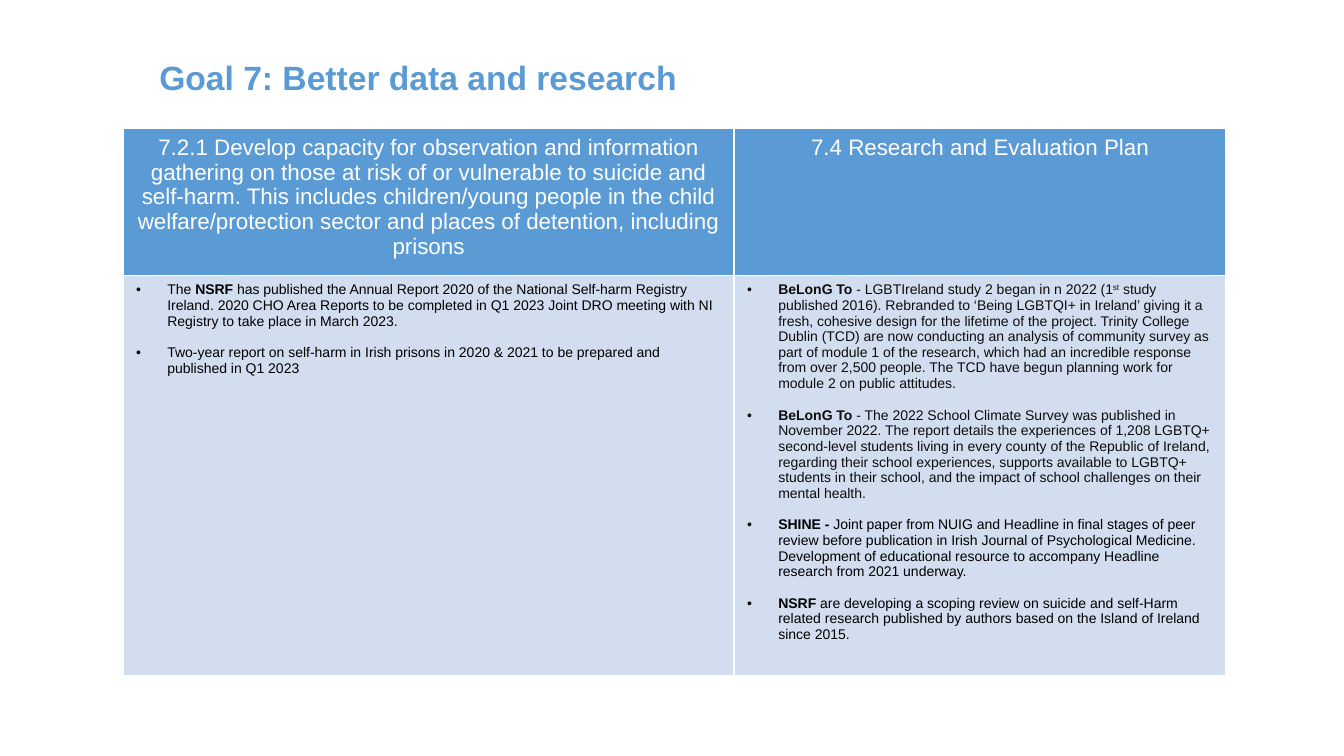
from dataclasses import dataclass

from lxml import etree
from pptx import Presentation
from pptx.dml.color import RGBColor
from pptx.enum.text import MSO_ANCHOR, PP_ALIGN
from pptx.oxml.ns import qn
from pptx.util import Inches, Pt

LEFT, CENTER = PP_ALIGN.LEFT, PP_ALIGN.CENTER
TOP = MSO_ANCHOR.TOP


@dataclass(frozen=True)
class Theme:
    font: str = "Arial"
    blue: str = "5B9BD5"
    pale: str = "D2DEEF"
    white: str = "FFFFFF"
    black: str = "000000"
    dark: str = "0D0D0D"
    title: int = 24
    header: int = 16
    body: int = 10


THEME = Theme()
PLAIN, BOLD, SUPER = "plain", "bold", "super"

HEADERS = [
    "7.2.1 Develop capacity for observation and information gathering on those at risk of "
    "or vulnerable to suicide and self-harm. This includes children/young people in the "
    "child welfare/protection sector and places of detention, including prisons",
    "7.4 Research and Evaluation Plan",
]
# Each column is a list of bullets: text colour, then runs of text and style
COLUMNS = [
    [
        (THEME.black, [
            ("The ", PLAIN),
            ("NSRF", BOLD),
            (" has published the Annual Report 2020 of the National Self-harm Registry "
             "Ireland. 2020 CHO Area Reports to be completed in Q1 2023 Joint DRO meeting "
             "with NI Registry to take place in March 2023.", PLAIN)]),
        (THEME.black, [
            ("Two-year report on self-harm in Irish prisons in 2020 & 2021 to be prepared "
             "and published in Q1 2023", PLAIN)]),
    ],
    [
        (THEME.dark, [
            ("BeLonG To ", BOLD),
            ("- LGBTIreland study 2 began in n 2022 (1", PLAIN),
            ("st", SUPER),
            (" study published 2016). Rebranded to ‘Being LGBTQI+ in Ireland’ giving it a "
             "fresh, cohesive design for the lifetime of the project. Trinity College Dublin "
             "(TCD) are now conducting an analysis of community survey as part of module 1 "
             "of the research, which had an incredible response from over 2,500 people. The "
             "TCD have begun planning work for module 2 on public attitudes.", PLAIN)]),
        (THEME.dark, [
            ("BeLonG To ", BOLD),
            ("- The 2022 School Climate Survey was published in November 2022. The report "
             "details the experiences of 1,208 LGBTQ+ second-level students living in every "
             "county of the Republic of Ireland, regarding their school experiences, "
             "supports available to LGBTQ+ students in their school, and the impact of "
             "school challenges on their mental health.", PLAIN)]),
        (THEME.black, [
            ("SHINE - ", BOLD),
            ("Joint paper from NUIG and Headline in final stages of peer review before "
             "publication in Irish Journal of Psychological Medicine. Development of "
             "educational resource to accompany Headline research from 2021 underway.",
             PLAIN)]),
        (THEME.black, [
            ("NSRF", BOLD),
            (" are developing a scoping review on suicide and self-Harm related research "
             "published by authors based on the Island of Ireland since 2015.", PLAIN)]),
    ],
]


def add_run(p, text, size, color, style=PLAIN):
    r = p.add_run()
    r.text = text
    r.font.name = THEME.font
    r.font.size = Pt(size)
    r.font.bold = style == BOLD
    r.font.color.rgb = RGBColor.from_string(color)
    if style == SUPER:
        r._r.get_or_add_rPr().set("baseline", "30000")


def format_cell(cell, fill):
    """Set the margins, fill and white 1 pt borders of a cell."""
    cell.margin_left = cell.margin_right = Inches(0.13)
    cell.margin_top = cell.margin_bottom = Inches(0.07)
    cell.vertical_anchor = TOP
    cell.fill.solid()
    cell.fill.fore_color.rgb = RGBColor.from_string(fill)
    tc_pr = cell._tc.get_or_add_tcPr()
    for i, side in enumerate(("a:lnL", "a:lnR", "a:lnT", "a:lnB")):
        line = etree.Element(qn(side), w=str(Pt(1)))
        solid = etree.SubElement(line, qn("a:solidFill"))
        etree.SubElement(solid, qn("a:srgbClr"), val=THEME.white)
        tc_pr.insert(i, line)


prs = Presentation()
prs.slide_width, prs.slide_height = Inches(13.33), Inches(7.5)
s = prs.slides.add_slide(prs.slide_layouts[5])

title = s.shapes.title
title.left, title.top = Inches(1.48), Inches(0.51)
title.width, title.height = Inches(5.57), Inches(0.5)
tf = title.text_frame
tf.word_wrap = False
tf.vertical_anchor = TOP
p = tf.paragraphs[0]
p.alignment = LEFT
add_run(p, "Goal 7: Better data and research", THEME.title, THEME.blue, BOLD)

table = s.shapes.add_table(2, 2, Inches(1.22), Inches(1.27), Inches(10.94), Inches(5.43)).table
table.first_row = table.horz_banding = False
for column, width in zip(table.columns, (6.06, 4.88)):
    column.width = Inches(width)
for row, height in zip(table.rows, (1.46, 3.97)):
    row.height = Inches(height)

for col, (header, bullets) in enumerate(zip(HEADERS, COLUMNS)):
    cell = table.cell(0, col)
    format_cell(cell, THEME.blue)
    p = cell.text_frame.paragraphs[0]
    p.alignment = CENTER
    add_run(p, header, THEME.header, THEME.white)

    cell = table.cell(1, col)
    format_cell(cell, THEME.pale)
    tf = cell.text_frame
    for i, (color, runs) in enumerate(bullets):
        p = tf.add_paragraph() if i else tf.paragraphs[0]
        p_pr = p._p.get_or_add_pPr()
        p_pr.set("marL", str(Inches(0.31)))
        p_pr.set("indent", str(-Inches(0.31)))
        etree.SubElement(p_pr, qn("a:buFont"), typeface=THEME.font)
        etree.SubElement(p_pr, qn("a:buChar"), char="•")
        if i:
            p.space_before = Pt(11.3)
        for text, style in runs:
            add_run(p, text, THEME.body, color, style)

prs.save("out.pptx")
